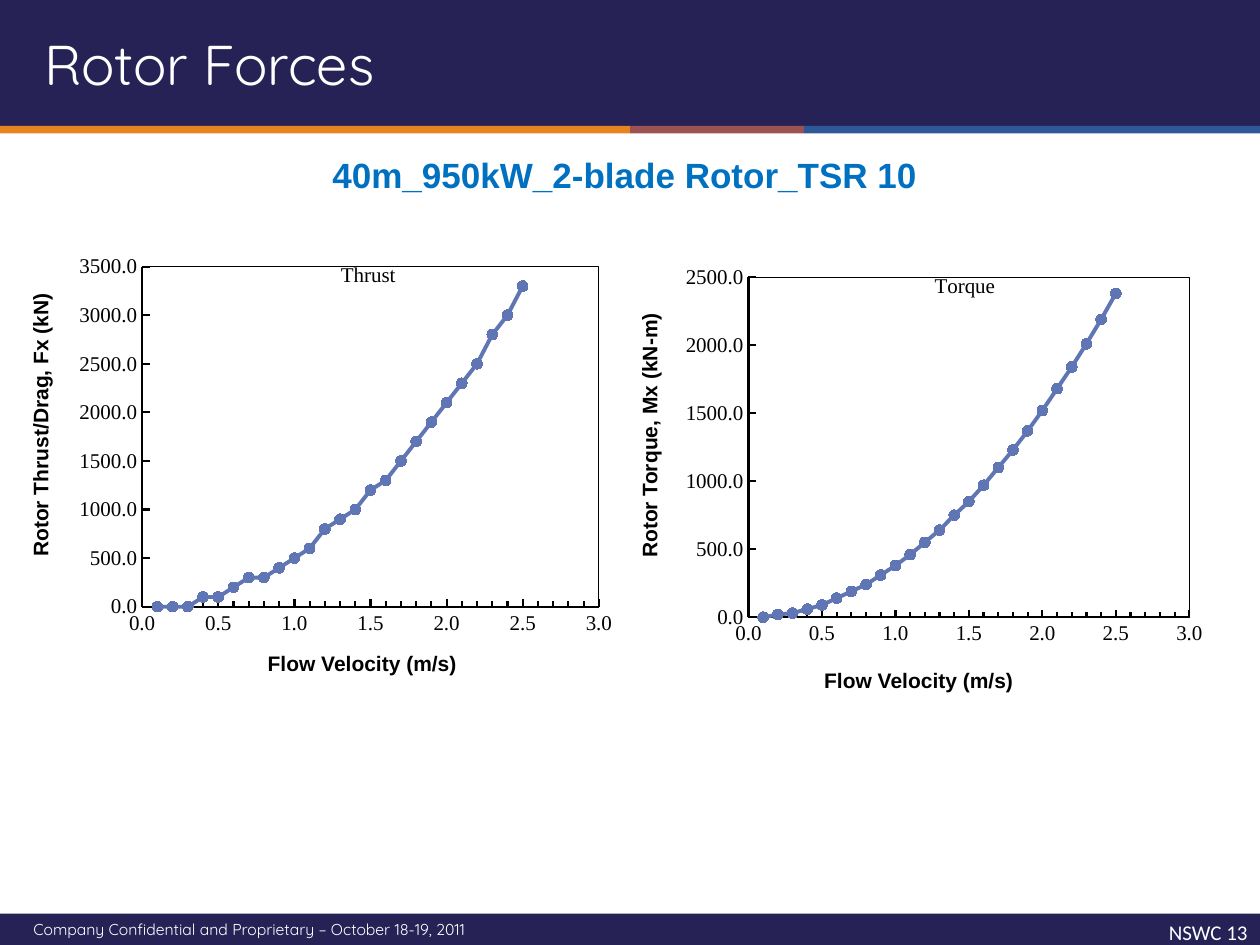
"""Build the Rotor Forces slide with its thrust and torque charts."""
from lxml import etree
from pptx import Presentation
from pptx.chart.data import XyChartData
from pptx.dml.color import RGBColor
from pptx.enum.chart import XL_CHART_TYPE as ChartType, XL_MARKER_STYLE as Marker, XL_TICK_MARK as Tick
from pptx.enum.shapes import MSO_SHAPE as Shape
from pptx.enum.text import MSO_ANCHOR as Anchor, PP_ALIGN as Align
from pptx.oxml import parse_xml
from pptx.oxml.ns import nsdecls, qn
from pptx.util import Pt

NAVY = RGBColor(0x27, 0x22, 0x55)
ORANGE = RGBColor(0xE6, 0x84, 0x22)
RED = RGBColor(0x9C, 0x52, 0x52)
BLUE = RGBColor(0x2F, 0x58, 0x97)
HEADING_BLUE = RGBColor(0x00, 0x70, 0xC0)
CURVE_BLUE = RGBColor(0x60, 0x76, 0xB4)
BLACK = RGBColor(0x00, 0x00, 0x00)
WHITE = RGBColor(0xFF, 0xFF, 0xFF)


def add_label(text, left, top, width, height, size, name, color, align, bold=False, rotation=0):
    box = slide.shapes.add_textbox(Pt(left), Pt(top), Pt(width), Pt(height))
    box.rotation = rotation
    box.text_frame.word_wrap = True
    para = box.text_frame.paragraphs[0]
    para.text = text
    para.alignment = align
    font = para.runs[0].font
    font.size, font.name, font.bold = Pt(size), name, bold
    font.color.rgb = color


def set_layout(parent, index, **settings):
    for old in parent.findall(qn("c:layout")):
        parent.remove(old)
    layout = parse_xml(f'<c:layout {nsdecls("c")}><c:manualLayout/></c:layout>')
    for tag, value in settings.items():
        etree.SubElement(layout[0], qn(f"c:{tag}")).set("val", str(value))
    parent.insert(index, layout)


deck = Presentation()
deck.slide_width, deck.slide_height = Pt(720), Pt(540)
slide = deck.slides.add_slide(deck.slide_layouts[5])

bands = [
    (0, 522, 720, 18, NAVY),
    (0, 0, 720, 72, NAVY),
    (0, 72, 360, 4.3, ORANGE),
    (360, 72, 99.4, 4.3, RED),
    (459.4, 72, 260.6, 4.3, BLUE),
]
for left, top, width, height, color in bands:
    band = slide.shapes.add_shape(Shape.RECTANGLE, Pt(left), Pt(top), Pt(width), Pt(height))
    band.shadow.inherit = False
    band.fill.solid()
    band.fill.fore_color.rgb = color
    band.line.fill.background()

title = slide.shapes.title
title.left, title.top, title.width, title.height = Pt(18), Pt(6), Pt(666), Pt(60)
slide.shapes._spTree.append(title._element)
title.text_frame.text = "Rotor Forces"
title.text_frame.vertical_anchor = Anchor.MIDDLE
title_para = title.text_frame.paragraphs[0]
title_para.alignment = Align.LEFT
title_font = title_para.runs[0].font
title_font.size, title_font.name = Pt(32), "Quicksand"
title_font.color.rgb = WHITE

velocities = [step / 10 for step in range(1, 26)]
torques = [0, 20, 30, 60, 90, 140, 190, 240, 310, 380, 460, 550, 640, 750, 850, 970,
           1100, 1230, 1370, 1520, 1680, 1840, 2010, 2190, 2380]
thrusts = [0, 0, 0, 100, 100, 200, 300, 300, 400, 500, 600, 800, 900, 1000, 1200, 1300,
           1500, 1700, 1900, 2100, 2300, 2500, 2800, 3000, 3300]
plots = [
    ("Torque", torques, 2500, 384, 144, 336, 0.44),
    ("Thrust", thrusts, 3500, 36, 138, 348, 0.45),
]
for name, forces, maximum, left, top, width, name_left in plots:
    data = XyChartData(number_format="0.0")
    points = data.add_series(name)
    for velocity, force in zip(velocities, forces):
        points.add_data_point(velocity, force)
    chart = slide.shapes.add_chart(
        ChartType.XY_SCATTER_LINES, Pt(left), Pt(top), Pt(width), Pt(240), data).chart
    chart.has_legend = False
    chart.font.size, chart.font.name = Pt(12), "Times New Roman"
    chart.font.color.rgb = BLACK

    chart.has_title = True
    chart.chart_title.text_frame.text = name
    name_font = chart.chart_title.text_frame.paragraphs[0].runs[0].font
    name_font.size, name_font.name, name_font.bold = Pt(12), "Times New Roman", False
    name_font.color.rgb = BLACK
    chart.chart_title.include_in_layout = True
    set_layout(chart.chart_title._element, 1, xMode="edge", yMode="edge", x=name_left, y=0.04)

    plot_area = chart._chartSpace.chart.plotArea
    set_layout(plot_area, 0, layoutTarget="inner", xMode="edge", yMode="edge",
               x=0.13, y=0.06, w=0.75, h=0.81)
    plot_area.append(parse_xml(
        f'<c:spPr {nsdecls("c", "a")}><a:noFill/><a:ln w="{Pt(0.5)}"><a:solidFill>'
        f'<a:srgbClr val="{BLACK}"/></a:solidFill></a:ln></c:spPr>'))

    for axis, limit, step in ((chart.category_axis, 3, 0.5), (chart.value_axis, maximum, 500)):
        axis.minimum_scale, axis.maximum_scale, axis.major_unit = 0, limit, step
        axis.has_major_gridlines = False
        axis.major_tick_mark, axis.minor_tick_mark = Tick.INSIDE, Tick.NONE
        axis.tick_labels.number_format = "0.0"
        axis.tick_labels.number_format_is_linked = False
        axis.format.line.width = Pt(1.25)
        axis.format.line.color.rgb = BLACK
    chart.category_axis.minor_unit = 0.1
    chart.category_axis.minor_tick_mark = Tick.INSIDE

    chart.plots[0].vary_by_categories = False
    curve = chart.plots[0].series[0]
    curve.smooth = False
    curve.format.line.width = Pt(2.25)
    curve.format.line.color.rgb = CURVE_BLUE
    curve.marker.style, curve.marker.size = Marker.CIRCLE, 6
    curve.marker.format.fill.solid()
    curve.marker.format.fill.fore_color.rgb = CURVE_BLUE
    curve.marker.format.line.color.rgb = CURVE_BLUE

axis_names = [
    ("Flow Velocity (m/s)", 120, 368, 174, 0),
    ("Flow Velocity (m/s)", 438, 378, 174, 0),
    ("Rotor Torque, Mx (kN-m)", 278, 238, 186, 270),
    ("Rotor Thrust/Drag, Fx (kN)", -70, 232, 186, 270),
]
for text, left, top, width, rotation in axis_names:
    add_label(text, left, top, width, 21.8, 12, "Arial", BLACK, Align.CENTER, True, rotation)

add_label("40m_950kW_2-blade Rotor_TSR 10", 30, 84, 654, 31.5, 20, "Arial", HEADING_BLUE, Align.CENTER, True)
add_label("Company Confidential and Proprietary – October 18-19, 2011",
          12, 522, 318, 18, 9, "Quicksand", WHITE, Align.LEFT)
add_label("NSWC 13", 552, 522, 168, 30, 12, "Calibri", WHITE, Align.RIGHT)

deck.save("out.pptx")
